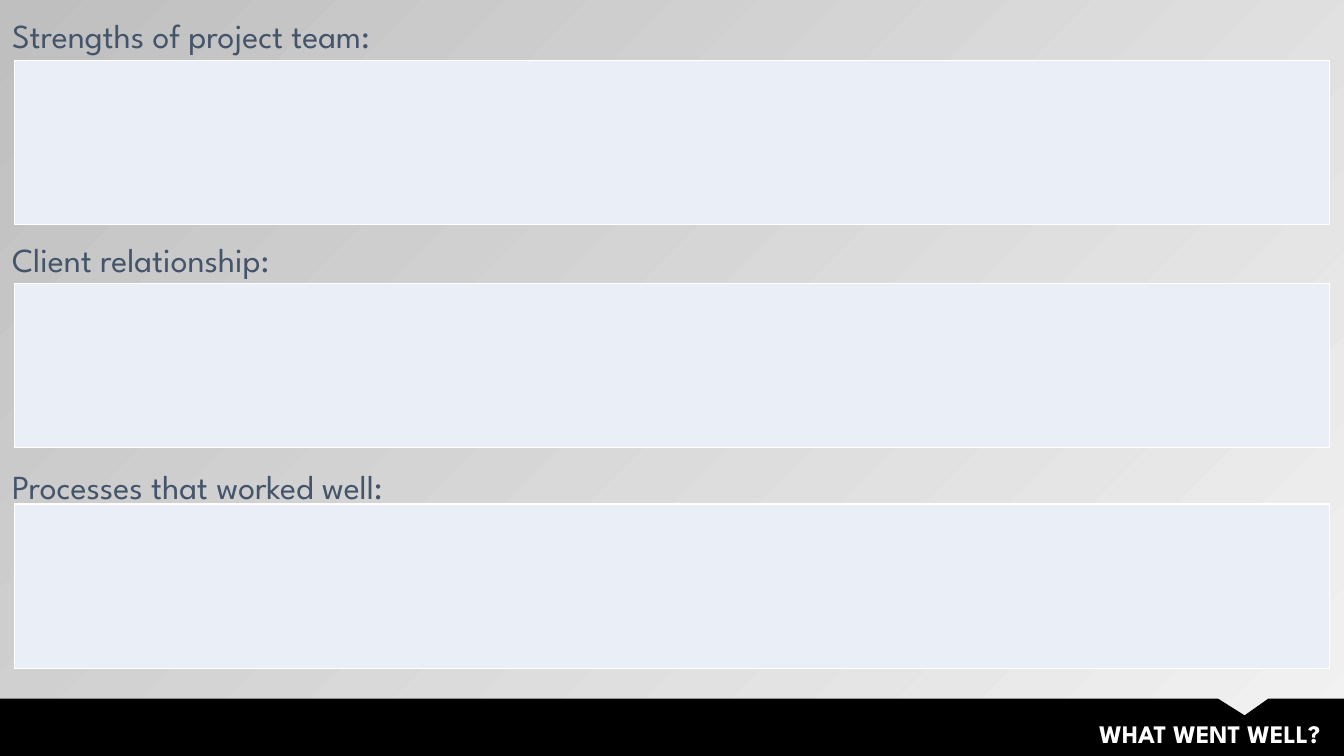
import pptx
import pptx.dml.color
import pptx.enum.shapes
import pptx.enum.text
import pptx.oxml
import pptx.oxml.ns
import pptx.util

Pt = pptx.util.Pt
FONT = "League Spartan"
WIDTH, HEIGHT = 960, 540
LABEL_WIDTH, ANSWER_HEIGHT = 549.4, 117.4
SECTIONS = [
    ("Strengths of project team:", 13.7, 31.7, 43.2, Pt(21.5)),
    ("Client relationship:", 173.5, 31.7, 202.3, Pt(21.5)),
    ("Processes that worked well:", 322.6, 41, 360, 1.2),
]


def rgb(value):
    """Return the colour for a hex string."""
    return pptx.dml.color.RGBColor.from_string(value)


def style_paragraph(p, size, color, bold=False):
    """Set the font of a whole paragraph."""
    p.font.name = FONT
    p.font.size = Pt(size)
    p.font.bold = bold
    p.font.color.rgb = rgb(color)


def set_background(s):
    """Fill the slide with a diagonal grey gradient."""
    fill = s.background.fill
    fill.gradient()
    fill.gradient_angle = 135
    for stop, color in zip(fill.gradient_stops, ("F2F2F2", "BFBFBF")):
        stop.color.rgb = rgb(color)


def set_borders(cell, color, width):
    """Draw a solid line on all four sides of a cell."""
    tc_pr = cell._tc.get_or_add_tcPr()
    for i, side in enumerate(("lnL", "lnR", "lnT", "lnB")):
        tc_pr.insert(i, pptx.oxml.parse_xml(
            f'<a:{side} {pptx.oxml.ns.nsdecls("a")} w="{Pt(width)}">'
            f'<a:solidFill><a:srgbClr val="{color}"/></a:solidFill></a:{side}>'))


def add_label(s, text, left, top, width, height, spacing):
    """Add the heading of a section."""
    tf = s.shapes.add_textbox(Pt(left), Pt(top), Pt(width), Pt(height)).text_frame
    tf.word_wrap = True
    tf.margin_left = tf.margin_right = Pt(8.64)
    tf.margin_top = tf.margin_bottom = Pt(4.32)
    p = tf.paragraphs[0]
    p.text = text
    p.line_spacing = spacing
    p.space_before = Pt(4.8)
    style_paragraph(p, 24, "44546A")


def add_answer(s, left, top, width, height):
    """Add an empty one-cell table to write in."""
    table = s.shapes.add_table(1, 1, Pt(left), Pt(top), Pt(width), Pt(height)).table
    table.first_row = table.horz_banding = False
    cell = table.cell(0, 0)
    cell.fill.solid()
    cell.fill.fore_color.rgb = rgb("EAEFF7")
    set_borders(cell, "FFFFFF", 1)


def add_title_band(s, left, top, width, height):
    """Add the notched black band with the slide title on it."""
    right, bottom = left + width, top + height
    builder = s.shapes.build_freeform(left, top, scale=Pt(1))
    builder.add_line_segments([
        (right - 89.5, top), (right - 70.8, top + 12.2), (right - 53.5, top),
        (right, top), (right, bottom), (left, bottom)])
    band = builder.convert_to_shape()
    band.shadow.inherit = False
    band.fill.solid()
    band.fill.fore_color.rgb = rgb("000000")
    band.line.fill.background()

    title = s.shapes.title
    band._element.addnext(title._element)
    title.left, title.top = Pt(right - 661.9), Pt(top + 10.8)
    title.width, title.height = Pt(652.3), Pt(28.8)
    tf = title.text_frame
    tf.word_wrap = True
    tf.auto_size = pptx.enum.text.MSO_AUTO_SIZE.NONE
    tf.vertical_anchor = pptx.enum.text.MSO_ANCHOR.TOP
    tf.margin_left = tf.margin_right = Pt(7.2)
    tf.margin_top = tf.margin_bottom = Pt(3.6)
    p = tf.paragraphs[0]
    p.text = "WHAT WENT WELL?"
    p.alignment = pptx.enum.text.PP_ALIGN.RIGHT
    p.line_spacing = 1.0
    p.space_before = Pt(0)
    style_paragraph(p, 18, "FFFFFF", bold=True)


def main():
    """Build and save the slide."""
    prs = pptx.Presentation()
    prs.slide_width, prs.slide_height = Pt(WIDTH), Pt(HEIGHT)
    s = prs.slides.add_slide(prs.slide_layouts[5])
    set_background(s)
    add_title_band(s, 0, 499, WIDTH, 41)
    for text, label_top, label_height, answer_top, spacing in SECTIONS:
        add_answer(s, 10.1, answer_top, WIDTH - 20.4, ANSWER_HEIGHT)
        add_label(s, text, 0, label_top, LABEL_WIDTH, label_height, spacing)
    prs.save("out.pptx")


if __name__ == "__main__":
    main()
